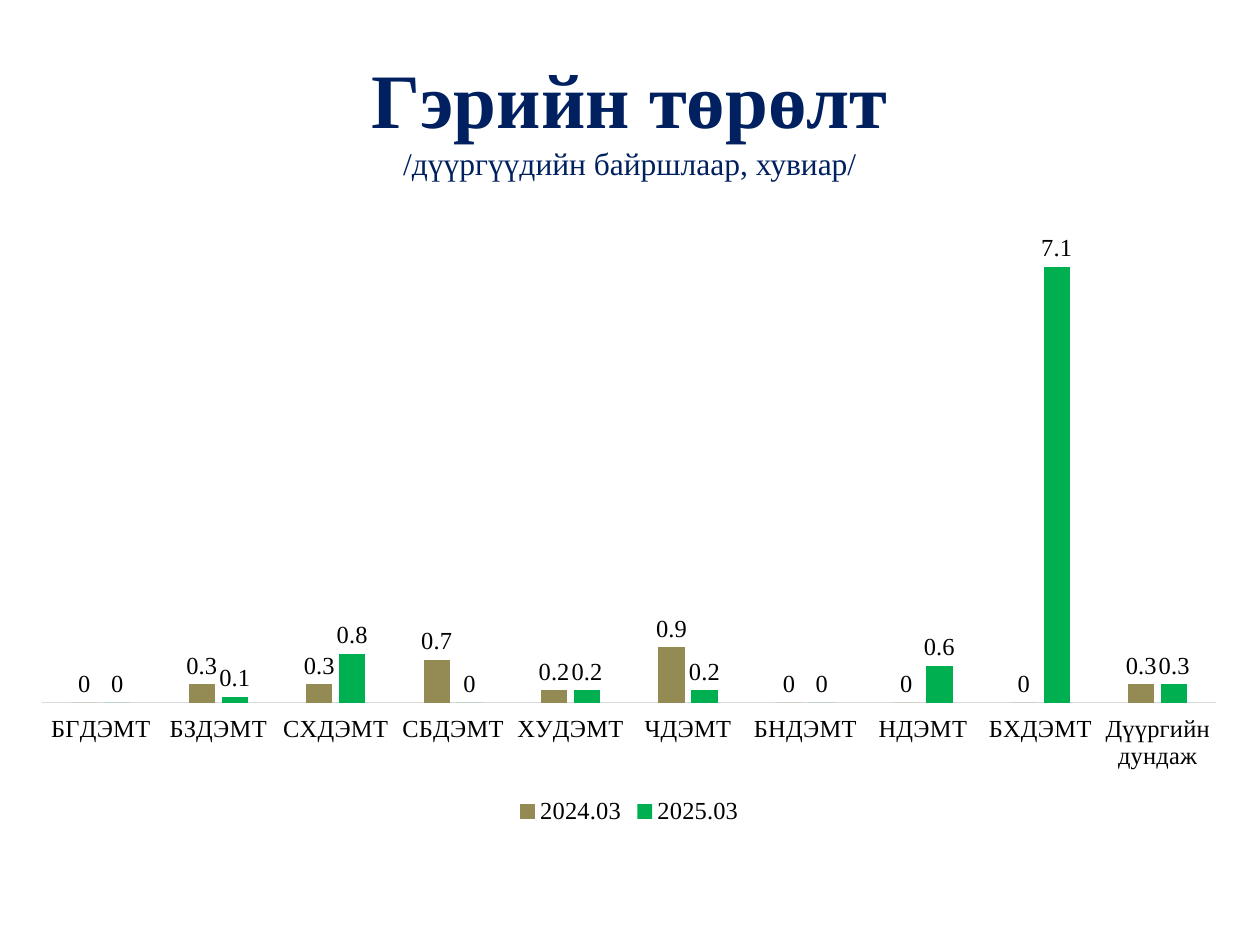
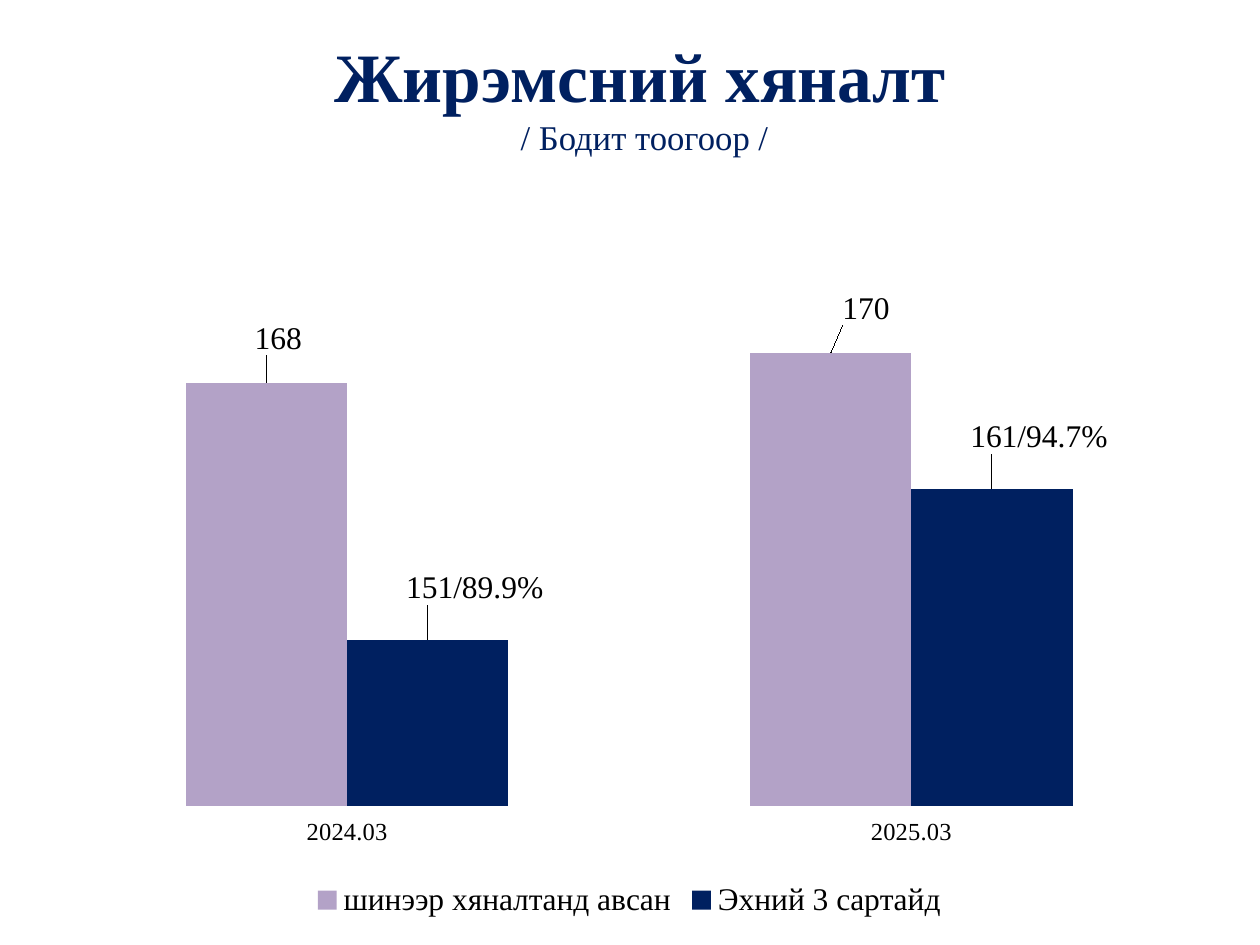
"""Build two slides with column charts of maternity care figures."""
from lxml.etree import SubElement as Sub
from pptx import Presentation
from pptx.chart.data import CategoryChartData as Data
from pptx.dml.color import RGBColor as Rgb
from pptx.enum.chart import XL_CHART_TYPE as Kind
from pptx.enum.chart import XL_LABEL_POSITION as Pos
from pptx.enum.chart import XL_LEGEND_POSITION as Side
from pptx.enum.chart import XL_TICK_LABEL_POSITION as Tick
from pptx.enum.chart import XL_TICK_MARK as Mark
from pptx.enum.text import MSO_ANCHOR as Anchor
from pptx.enum.text import PP_ALIGN as Align
from pptx.oxml.ns import qn
from pptx.util import Pt

PX = 9144
FONT = "Times New Roman"
HUES = {"navy": "002060", "black": "000000", "grey": "D9D9D9",
        "khaki": "948A54", "green": "00B050", "lilac": "B3A2C7"}

PAGES = [
    {"title": "Гэрийн төрөлт\n/дүүргүүдийн байршлаар, хувиар/",
     "head": (50, 30, 900, 125), "sizes": (44, 18),
     "box": (33, 153, 933, 506), "range": (0, 8),
     "cats": ["БГДЭМТ", "БЗДЭМТ", "СХДЭМТ", "СБДЭМТ", "ХУДЭМТ", "ЧДЭМТ",
              "БНДЭМТ", "НДЭМТ", "БХДЭМТ", "Дүүргийн дундаж"],
     "rows": [("2024.03", "khaki", (0, 0.3, 0.3, 0.7, 0.2, 0.9, 0, 0, 0, 0.3)),
              ("2025.03", "green", (0, 0.1, 0.8, 0, 0.2, 0.2, 0, 0.6, 7.1, 0.3))],
     "gap": 221, "lap": -25, "plot": (0, 0.03, 1, 0.77),
     "text": 14, "line": "grey", "notes": []},
    {"title": "Жирэмсний хяналт\n / Бодит тоогоор /",
     "head": (33, 17, 950, 117), "sizes": (39.6, 19.8),
     "box": (33, 150, 933, 583), "range": (140, 175),
     "cats": ["2024.03", "2025.03"],
     "rows": [("шинээр хяналтанд авсан", "lilac", (168, 170)),
              ("Эхний 3 сартайд", "navy", (151, 161))],
     "gap": 150, "lap": 0, "plot": (0.02, 0.12, 0.96, 0.72),
     "text": 18, "line": None,
     "notes": [(0, 0, None, 0.01, -0.03), (0, 1, None, 0.03, -0.03),
               (1, 0, "151/89.9%", 0.04, -0.04),
               (1, 1, "161/94.7%", 0.04, -0.04)]},
]


def style(font, size, hue="black", bold=False):
    font.name, font.size, font.bold = FONT, Pt(size), bold
    font.color.rgb = Rgb.from_string(HUES[hue])


def place(node, spot, **vals):
    for old in node.findall(qn("c:layout")):
        node.remove(old)
    lay = Sub(node, qn("c:layout"))
    node.insert(spot, lay)
    man = Sub(lay, qn("c:manualLayout"))
    for key, val in vals.items():
        Sub(man, qn(f"c:{key}")).set("val", str(val))


deck = Presentation()
deck.slide_width, deck.slide_height = 1000 * PX, 750 * PX

for page in PAGES:
    slide = deck.slides.add_slide(deck.slide_layouts[6])
    frame = slide.shapes.add_textbox(*[n * PX for n in page["head"]]).text_frame
    frame.word_wrap = True
    frame.vertical_anchor = Anchor.MIDDLE
    para = frame.paragraphs[0]
    para.text = page["title"]
    para.alignment = Align.CENTER
    for run, size, bold in zip(para.runs, page["sizes"], (True, False)):
        style(run.font, size, "navy", bold)

    data = Data()
    data.categories = page["cats"]
    for name, hue, vals in page["rows"]:
        data.add_series(name, vals)
    box = [n * PX for n in page["box"]]
    chart = slide.shapes.add_chart(Kind.COLUMN_CLUSTERED, *box, data).chart
    style(chart.font, 14)
    chart.has_title = False
    chart.has_legend = True
    chart.legend.position = Side.BOTTOM
    chart.legend.include_in_layout = False
    style(chart.legend.font, page["text"])

    axis = chart.category_axis
    axis.major_tick_mark = axis.minor_tick_mark = Mark.NONE
    axis.tick_label_position = Tick.LOW
    style(axis.tick_labels.font, 14)
    if page["line"]:
        axis.format.line.width = Pt(0.75)
        axis.format.line.color.rgb = Rgb.from_string(HUES[page["line"]])
    else:
        axis.format.line.fill.background()
    scale = chart.value_axis
    scale.minimum_scale, scale.maximum_scale = page["range"]
    scale.has_major_gridlines = False
    scale.visible = False

    plot = chart.plots[0]
    plot.vary_by_categories = False
    plot.gap_width, plot.overlap = page["gap"], page["lap"]
    for bars, (name, hue, vals) in zip(plot.series, page["rows"]):
        bars.format.fill.solid()
        bars.format.fill.fore_color.rgb = Rgb.from_string(HUES[hue])
        tags = bars.data_labels
        tags.show_value = True
        tags.position = Pos.OUTSIDE_END
        style(tags.font, page["text"])

    for row, col, text, dx, dy in page["notes"]:
        tag = plot.series[row].points[col].data_label
        if text:
            line = tag.text_frame.paragraphs[0]
            line.text = text
            style(line.runs[0].font, page["text"])
        else:
            style(tag.font, page["text"])
        tag.position = Pos.OUTSIDE_END
    root = chart.element
    for node, note in zip(root.iter(qn("c:dLbl")), page["notes"]):
        place(node, 1, x=note[3], y=note[4])
    left, top, wide, high = page["plot"]
    place(next(root.iter(qn("c:plotArea"))), 0, layoutTarget="inner",
          xMode="edge", yMode="edge", x=left, y=top, w=wide, h=high)

deck.save("out.pptx")
